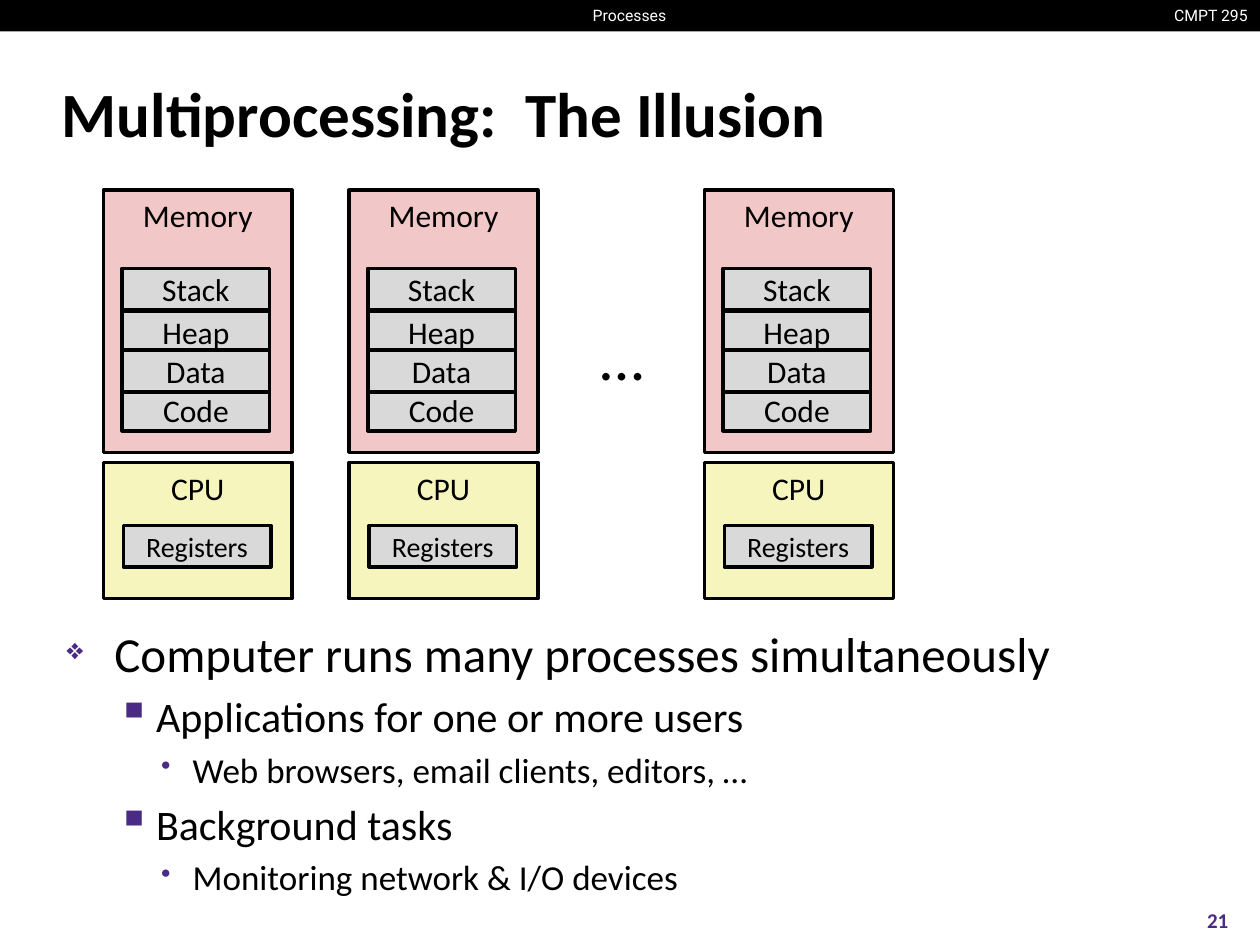
from lxml import etree
from pptx import Presentation
from pptx.dml.color import RGBColor
from pptx.enum import shapes, text
from pptx.oxml.ns import qn
from pptx.util import Inches, Pt

BLACK = RGBColor(0x00, 0x00, 0x00)
WHITE = RGBColor(0xFF, 0xFF, 0xFF)
PURPLE = RGBColor(0x4B, 0x2A, 0x85)
PINK = RGBColor(0xF1, 0xC7, 0xC7)
YELLOW = RGBColor(0xF6, 0xF5, 0xBD)
GRAY = RGBColor(0xD9, 0xD9, 0xD9)
LEFT, CENTER, RIGHT = text.PP_ALIGN.LEFT, text.PP_ALIGN.CENTER, text.PP_ALIGN.RIGHT
TOP, MIDDLE = text.MSO_ANCHOR.TOP, text.MSO_ANCHOR.MIDDLE

# Content
TITLE = "Multiprocessing:  The Illusion"
PROCESS_LEFTS = [0.82, 2.77, 5.59]
# label, offset from process left, top, width, height, fill, size, anchor
PROCESS_BOXES = [
    ("CPU", 0, 3.67, 1.5, 1.08, YELLOW, 18, TOP),
    ("Registers", 0.16, 4.17, 1.17, 0.33, GRAY, 16, MIDDLE),
    ("Memory", 0, 1.51, 1.5, 2.08, PINK, 18, TOP),
    ("Stack", 0.15, 2.13, 1.17, 0.33, GRAY, 18, MIDDLE),
    ("Heap", 0.15, 2.47, 1.17, 0.33, GRAY, 18, MIDDLE),
    ("Code", 0.15, 3.09, 1.17, 0.33, GRAY, 18, MIDDLE),
    ("Data", 0.15, 2.78, 1.17, 0.33, GRAY, 18, MIDDLE),
]
BULLETS = [
    (0, "Computer runs many processes simultaneously"),
    (1, "Applications for one or more users"),
    (2, "Web browsers, email clients, editors, …"),
    (1, "Background tasks"),
    (2, "Monitoring network & I/O devices"),
]
# per level: text size, left margin, hanging indent, bullet, bullet percent
LEVELS = [(28, 0.38, 0.38, "❖", 60), (24, 0.71, 0.31, "▪", 110), (20, 1, 0.25, "•", 80)]


def write(p, words, size, color=BLACK, name="Calibri", bold=False, align=LEFT):
    p.alignment = align
    r = p.add_run()
    r.text = words
    for key, value in {"size": Pt(size), "name": name, "bold": bold}.items():
        setattr(r.font, key, value)
    r.font.color.rgb = color


def frame(sp, anchor=TOP, wrap=True):
    tf = sp.text_frame
    for key, value in {"word_wrap": wrap, "vertical_anchor": anchor,
                       "auto_size": text.MSO_AUTO_SIZE.NONE}.items():
        setattr(tf, key, value)
    return tf


def add_text(s, box, words, size, anchor=TOP, wrap=True, **look):
    sp = s.shapes.add_textbox(*map(Inches, box))
    write(frame(sp, anchor, wrap).paragraphs[0], words, size, **look)


def add_rect(s, box, fill, line=None):
    sp = s.shapes.add_shape(shapes.MSO_SHAPE.RECTANGLE, *map(Inches, box))
    sp.shadow.inherit = False
    sp.fill.solid()
    sp.fill.fore_color.rgb = fill
    if line is None:
        sp.line.fill.background()
    else:
        sp.line.color.rgb = line
        sp.line.width = Pt(2)
    return sp


def indent(p, margin, first):
    pPr = p._p.get_or_add_pPr()
    pPr.set("marL", str(Inches(margin)))
    pPr.set("indent", str(Inches(first)))
    return pPr


def add_bullet(p, level, words):
    size, margin, hang, char, percent = LEVELS[level]
    p.level = level
    write(p, words, size)
    pPr = indent(p, margin, -hang)
    before = etree.SubElement(pPr, qn("a:spcBef"))
    etree.SubElement(before, qn("a:spcPct"), val="20000")
    color = etree.SubElement(pPr, qn("a:buClr"))
    etree.SubElement(color, qn("a:srgbClr"), val=str(PURPLE))
    etree.SubElement(pPr, qn("a:buSzPct"), val=str(percent * 1000))
    etree.SubElement(pPr, qn("a:buChar"), char=char)


def main():
    prs = Presentation()
    prs.slide_width, prs.slide_height = Inches(10), Inches(7.5)
    s = prs.slides.add_slide(prs.slide_layouts[5])

    # Header band
    add_rect(s, (0, 0, 10, 0.25), BLACK)
    header = {"size": 9, "wrap": False, "color": WHITE, "name": "Roboto"}
    add_text(s, (9.19, 0, 0.81, 0.25), "CMPT 295", align=RIGHT, **header)
    add_text(s, (4.6, 0, 0.79, 0.25), "Processes", align=CENTER, **header)

    # Title
    title = s.shapes.title
    title.left, title.top, title.width, title.height = map(Inches, (0.39, 0.48, 9.19, 0.83))
    p = frame(title, MIDDLE).paragraphs[0]
    write(p, TITLE, 36, bold=True)
    indent(p, 0.13, -0.13)

    # Bullets
    body = s.shapes.add_textbox(*map(Inches, (0.43, 4.9, 9.15, 2.4)))
    tf = frame(body)
    for i, (level, words) in enumerate(BULLETS):
        add_bullet(tf.add_paragraph() if i else tf.paragraphs[0], level, words)

    # Slide number
    add_text(s, (9.33, 7.1, 0.67, 0.4), "21", 12, MIDDLE,
             color=PURPLE, bold=True, align=CENTER)

    # One memory and CPU stack per process
    for left in PROCESS_LEFTS:
        for label, dx, top, width, height, fill, size, anchor in PROCESS_BOXES:
            sp = add_rect(s, (left + dx, top, width, height), fill, BLACK)
            write(frame(sp, anchor).paragraphs[0], label, size, align=CENTER)
    add_text(s, (4.67, 2.47, 0.55, 0.71), "…", 36, wrap=False)

    prs.save("out.pptx")


if __name__ == "__main__":
    main()
